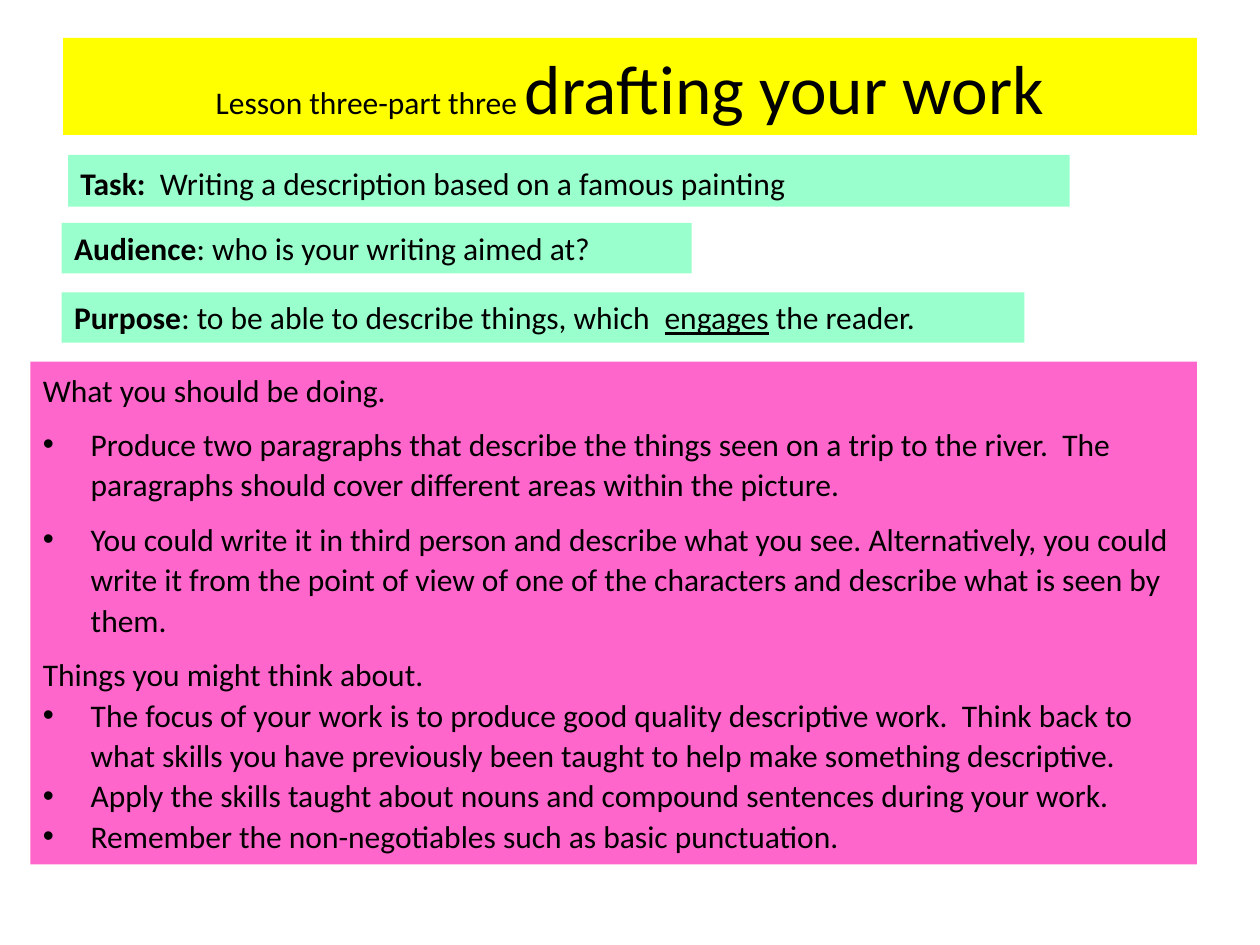
from lxml import etree
from pptx import Presentation
from pptx import util as u
from pptx.dml.color import RGBColor
from pptx.enum import shapes, text
from pptx.oxml import ns

BLACK = RGBColor(0x00, 0x00, 0x00)
YELLOW = RGBColor(0xFF, 0xFF, 0x00)
PINK = RGBColor(0xFF, 0x66, 0xCC)
MINT = RGBColor(0x99, 0xFF, 0xCC)

GOALS = [
    "Produce two paragraphs that describe the things seen on a trip to the river.  "
    "The paragraphs should cover different areas within the picture.",
    "You could write it in third person and describe what you see. Alternatively, you could "
    "write it from the point of view of one of the characters and describe what is seen by them.",
]
HINTS = [
    "The focus of your work is to produce good quality descriptive work.  Think back to "
    "what skills you have previously been taught to help make something descriptive.",
    "Apply the skills taught about nouns and compound sentences during your work.",
    "Remember the non-negotiables such as basic punctuation.",
]


def add_run(paragraph, words, size=18, bold=False, underline=False):
    """Append formatted words to a paragraph."""
    run = paragraph.add_run()
    run.text = words
    run.font.name = "Calibri"
    run.font.size = u.Pt(size)
    run.font.bold = bold
    run.font.underline = underline
    run.font.color.rgb = BLACK


class LessonSlide:
    """Hold the lesson style and slide, on a grid of 100 columns by 75 rows."""

    def __init__(self, presentation):
        self.column = presentation.slide_width / 100
        self.row = presentation.slide_height / 75
        self.slide = presentation.slides.add_slide(presentation.slide_layouts[1])

    def area(self, left, top, width, height):
        return (round(left * self.column), round(top * self.row),
                round(width * self.column), round(height * self.row))

    def place(self, shape, grid, color):
        shape.left, shape.top, shape.width, shape.height = self.area(*grid)
        shape.fill.solid()
        shape.fill.fore_color.rgb = color

    def title(self, grid, runs):
        shape = self.slide.shapes.title
        self.place(shape, grid, YELLOW)
        shape.text_frame.auto_size = text.MSO_AUTO_SIZE.NONE
        shape.text_frame.vertical_anchor = text.MSO_ANCHOR.MIDDLE
        paragraph = shape.text_frame.paragraphs[0]
        paragraph.alignment = text.PP_ALIGN.CENTER
        for words, style in runs:
            add_run(paragraph, words, **style)

    def label(self, grid, runs, spacing=1.0):
        shape = self.slide.shapes.add_shape(shapes.MSO_SHAPE.RECTANGLE, *self.area(*grid))
        self.place(shape, grid, MINT)
        shape.shadow.inherit = False
        shape.line.fill.background()
        frame = shape.text_frame
        frame.word_wrap = True
        frame.vertical_anchor = text.MSO_ANCHOR.TOP
        frame.auto_size = text.MSO_AUTO_SIZE.SHAPE_TO_FIT_TEXT
        paragraph = frame.paragraphs[0]
        paragraph.alignment = text.PP_ALIGN.LEFT
        paragraph.line_spacing = spacing
        for words, style in runs:
            add_run(paragraph, words, **style)

    def body(self, grid, items):
        shape = self.slide.placeholders[1]
        self.place(shape, grid, PINK)
        frame = shape.text_frame
        frame.auto_size = text.MSO_AUTO_SIZE.NONE
        frame.vertical_anchor = text.MSO_ANCHOR.TOP
        for index, (words, bulleted, space_after) in enumerate(items):
            paragraph = frame.add_paragraph() if index else frame.paragraphs[0]
            paragraph.line_spacing = 1.07
            paragraph.space_before = u.Pt(0)
            paragraph.space_after = u.Pt(space_after)
            self.bullet(paragraph, bulleted)
            add_run(paragraph, words)

    def bullet(self, paragraph, bulleted):
        indent = u.Inches(0.38) if bulleted else 0
        properties = paragraph._p.get_or_add_pPr()
        properties.set("marL", str(indent))
        properties.set("indent", str(-indent))
        if bulleted:
            etree.SubElement(properties, ns.qn("a:buFont")).set("typeface", "Arial")
            etree.SubElement(properties, ns.qn("a:buChar")).set("char", "•")
        else:
            etree.SubElement(properties, ns.qn("a:buNone"))


def main():
    presentation = Presentation()
    presentation.slide_width = u.Inches(10)
    presentation.slide_height = u.Inches(7.5)
    lesson = LessonSlide(presentation)
    bold, plain = {"bold": True}, {}

    lesson.title((5, 3, 90, 7.7), [("Lesson three-part three ", plain),
                                   ("drafting your work", {"size": 39.6})])
    lesson.body((2.4, 28.7, 92.6, 39.9), [
        ("What you should be doing.", False, 8),
        *((goal, True, 8) for goal in GOALS),
        ("Things you might think about.", False, 0),
        *((hint, True, 0) for hint in HINTS),
    ])
    lesson.label((5.4, 12.3, 79.5, 4.1), [
        ("Task:  ", bold), ("Writing a description based on a famous painting", plain)], 1.07)
    lesson.label((4.9, 17.7, 50, 4), [
        ("Audience", bold), (": who is your writing aimed at?", plain)])
    lesson.label((4.9, 23.2, 76.4, 4), [
        ("Purpose", bold), (": to be able to describe things, which  ", plain),
        ("engages", {"underline": True}), (" the reader.", plain)])
    presentation.save("out.pptx")


if __name__ == "__main__":
    main()
